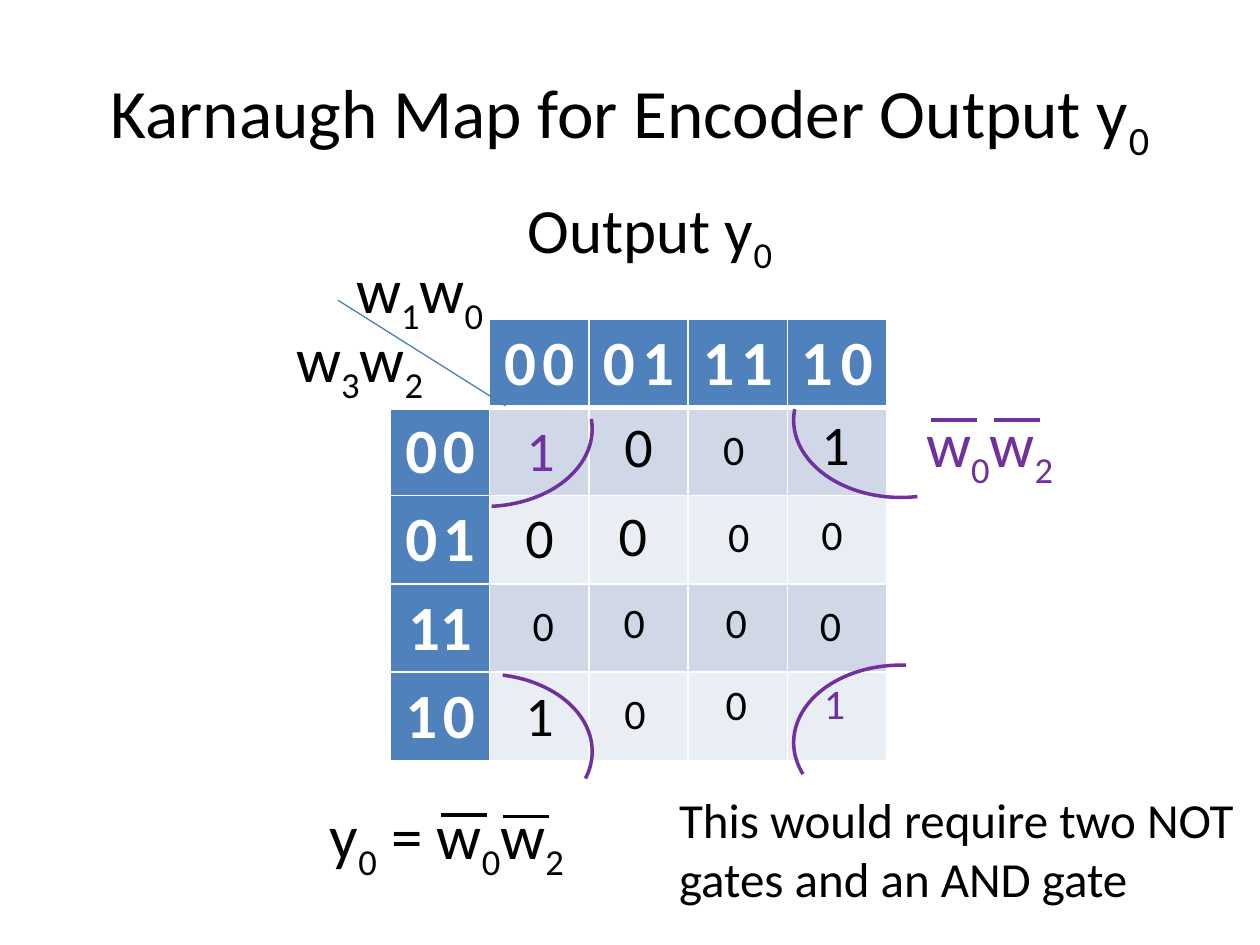
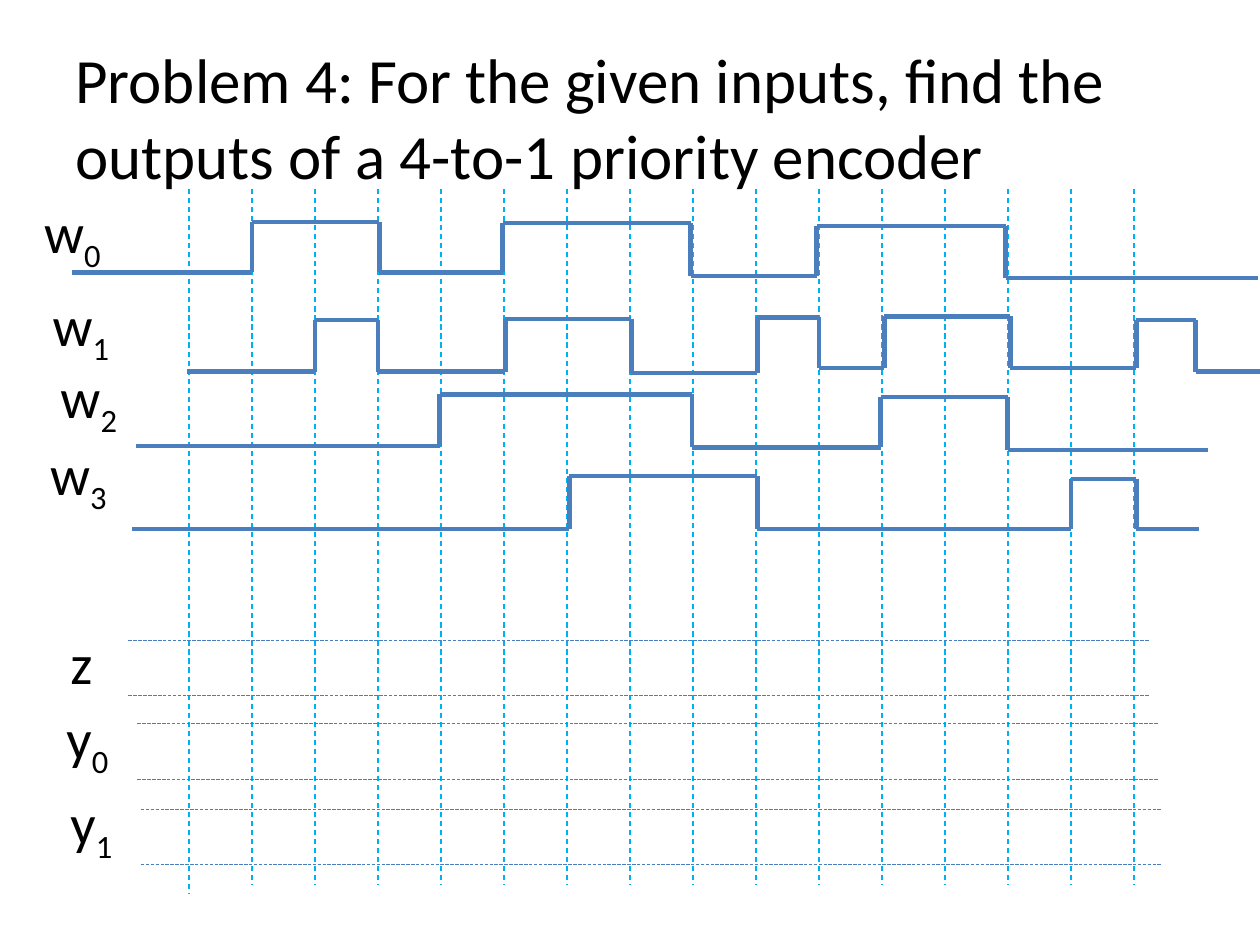
import pptx
import pptx.dml.color
import pptx.enum.dml
import pptx.enum.shapes
import pptx.enum.text
import pptx.oxml
import pptx.oxml.ns
import pptx.util
from pptx.util import Cm

COLORS = {
    "text": "000000",
    "white": "FFFFFF",
    "header": "4F81BD",
    "band_dark": "D0D8E8",
    "band_light": "E9EDF4",
    "signal": "4B7EBC",
    "group": "7030A0",
    "clock": "00B0F0",
}
FONT = "Calibri"
TITLE_BOX = (1.27, 0.76, 22.86, 3.18)
ALIGN = pptx.enum.text.PP_ALIGN
MIDDLE = pptx.enum.text.MSO_ANCHOR.MIDDLE
DASH = pptx.enum.dml.MSO_LINE


def add_text(slide, text, box, size, color="text", align=ALIGN.LEFT):
    """Add a text box in which "_" turns the next character into a subscript."""
    shape = slide.shapes.add_textbox(*map(Cm, box))
    shape.text_frame.word_wrap = True
    paragraph = shape.text_frame.paragraphs[0]
    paragraph.alignment = align
    first, *marked = text.split("_")
    pieces = [(first, False)]
    for part in marked:
        pieces += [(part[0], True), (part[1:], False)]
    for piece, is_subscript in pieces:
        if not piece:
            continue
        run = paragraph.add_run()
        run.text = piece
        run.font.name = FONT
        run.font.size = pptx.util.Pt(size)
        run.font.color.rgb = pptx.dml.color.RGBColor.from_string(COLORS[color])
        if is_subscript:
            run._r.get_or_add_rPr().set("baseline", "-25000")
    return shape


def add_line(slide, start, end, color, width, dash=None):
    line = slide.shapes.add_connector(
        pptx.enum.shapes.MSO_CONNECTOR.STRAIGHT, *map(Cm, (*start, *end)))
    line.line.color.rgb = pptx.dml.color.RGBColor.from_string(COLORS[color])
    line.line.width = pptx.util.Pt(width)
    if dash:
        line.line.dash_style = dash
    line._element.spPr.append(pptx.oxml.parse_xml(
        f"<a:effectLst {pptx.oxml.ns.nsdecls('a')}/>"))


presentation = pptx.Presentation()
presentation.slide_width = Cm(25.4)
presentation.slide_height = Cm(19.05)
blank_layout = presentation.slide_layouts[6]

# Slide 1: Karnaugh map
slide = presentation.slides.add_slide(blank_layout)
title = add_text(slide, "Karnaugh Map for Encoder Output y_0", TITLE_BOX, 39.6,
                 align=ALIGN.CENTER)
title.text_frame.vertical_anchor = MIDDLE

table = slide.shapes.add_table(5, 5, Cm(7.87), Cm(6.43), Cm(10), Cm(8.9)).table
table.horz_banding = False
# Each header code with the size of the space between its digits
column_codes = [("0 0", 16), ("0 1", 18), ("1 1", 16), ("1 0", 20)]
row_codes = [("0 0", 14), ("0 1", 14), ("11", 14), ("1 0", 14)]
headers = {(0, i): code for i, code in enumerate(column_codes, 1)}
headers.update({(i, 0): code for i, code in enumerate(row_codes, 1)})

for row in range(5):
    for column in range(5):
        cell = table.cell(row, column)
        cell.vertical_anchor = MIDDLE
        if (row, column) in headers:
            fill = "header"
            code, space_size = headers[row, column]
            paragraph = cell.text_frame.paragraphs[0]
            paragraph.alignment = ALIGN.CENTER
            for character in code:
                run = paragraph.add_run()
                run.text = character
                run.font.name = FONT
                run.font.bold = True
                run.font.size = pptx.util.Pt(space_size if character == " " else 36)
                run.font.color.rgb = pptx.dml.color.RGBColor.from_string(COLORS["white"])
        elif row == 0:
            fill = "white"
        else:
            fill = "band_dark" if row % 2 else "band_light"
        cell.fill.solid()
        cell.fill.fore_color.rgb = pptx.dml.color.RGBColor.from_string(COLORS[fill])
        for position, side in enumerate("LRTB"):
            is_thick = (row, side) in ((0, "B"), (1, "T"))
            border = pptx.oxml.parse_xml(
                f'<a:ln{side} {pptx.oxml.ns.nsdecls("a")} w="{38100 if is_thick else 12700}">'
                f'<a:solidFill><a:srgbClr val="{COLORS["white"]}"/></a:solidFill></a:ln{side}>')
            cell._tc.get_or_add_tcPr().insert(position, border)

add_line(slide, (10.19, 8.18), (6.81, 6.05), "signal", 0.75)
add_text(slide, "w_1w_0", (6.93, 4.93, 3.46, 1.8), 36)
add_text(slide, "w_3w_2", (5.72, 6.32, 3.58, 1.8), 36)
add_text(slide, "Output y_0", (10.39, 3.71, 5.79, 1.8), 36)

map_values = [
    ("1", 10.36, 8.26, 32, "group"), ("0", 12.34, 8.18, 32, "text"),
    ("0", 14.33, 8.41, 24, "text"), ("1", 16.31, 8.13, 32, "text"),
    ("0", 10.34, 10.01, 32, "text"), ("0", 12.22, 9.96, 32, "text"),
    ("0", 14.43, 10.16, 24, "text"), ("0", 16.31, 10.13, 24, "text"),
    ("0", 10.49, 11.96, 24, "text"), ("0", 12.32, 11.91, 24, "text"),
    ("0", 14.38, 11.91, 24, "text"), ("0", 16.28, 11.96, 24, "text"),
    ("1", 10.34, 13.59, 32, "text"), ("0", 12.34, 13.74, 24, "text"),
    ("0", 14.38, 13.56, 24, "text"), ("1", 16.36, 13.54, 24, "group"),
]
for value, left, top, size, color in map_values:
    add_text(slide, value, (left, top, 1.22, 1.63 if size == 32 else 1.27), size, color)

corner_arcs = [
    (7.62, 7.09, 212.76, 51.08, False),
    (16, 6.91, 212.47, 61.38, True),
    (7.62, 13.59, 169.83, 9.05, False),
    (16, 13.41, 159.68, 10.75, True),
]
for left, top, start_angle, end_angle, is_flipped in corner_arcs:
    arc = slide.shapes.add_shape(pptx.enum.shapes.MSO_SHAPE.ARC,
                                 Cm(left), Cm(top), Cm(4.32), Cm(3.12))
    arc.adjustments[0] = start_angle
    arc.adjustments[1] = end_angle
    arc.shadow.inherit = False
    arc.fill.background()
    arc.line.color.rgb = pptx.dml.color.RGBColor.from_string(COLORS["group"])
    arc.line.width = pptx.util.Pt(2)
    if is_flipped:
        arc._element.spPr.xfrm.set("flipH", "1")

add_text(slide, "w_0w_2", (18.42, 8.03, 3.68, 1.8), 36, "group")
add_text(slide, "y_0 = w_0w_2", (6.4, 15.93, 7.16, 1.8), 36)
overbars = [(18.77, 8.46, "group"), (20.04, 8.46, "group"),
            (8.89, 16.43, "text"), (10.13, 16.46, "text")]
for left, top, color in overbars:
    add_line(slide, (left, top), (left + 0.93, top), color, 2.25)
add_text(slide, "This would require two NOT gates and an AND gate",
         (13.44, 15.8, 11.81, 2.64), 28)

# Slide 2: timing diagram
slide = presentation.slides.add_slide(blank_layout)
title = add_text(
    slide, "Problem 4: For the given inputs, find the outputs of a 4-to-1 priority encoder",
    TITLE_BOX, 36)
title.text_frame.vertical_anchor = MIDDLE

for tick in range(16):
    x = 3.81 + 1.27 * tick
    add_line(slide, (x, 3.81), (x, 17.83 if tick else 18.03), "clock", 0.75, DASH.DASH)

signal_labels = [
    ("w_0", 0.64, 3.86), ("w_1", 0.81, 5.74), ("w_2", 0.97, 7.19), ("w_3", 0.76, 8.74),
    ("z", 1.17, 12.55), ("y_0", 1.09, 14.05), ("y_1", 1.17, 15.77),
]
for label, left, top in signal_labels:
    add_text(slide, label, (left, top, 1.78, 2.03), 32)

for left, high in [(2.59, 12.9), (2.77, 14.58), (2.84, 16.31)]:
    for y in (high, high + 1.12):
        add_line(slide, (left, y), (left + 20.57, y), "signal", 0.25, DASH.LONG_DASH)

# Each waveform: its start, then the end and the level of every step
waveforms = [
    (1.45, [(5.08, 5.49), (7.65, 4.47), (10.13, 5.49), (13.92, 4.5),
            (16.46, 5.56), (20.27, 4.55), (25.35, 5.61)]),
    (3.76, [(6.35, 7.49), (7.62, 6.45), (10.19, 7.49), (12.73, 6.43),
            (15.27, 7.52), (16.51, 6.4), (17.83, 7.42), (20.37, 6.38),
            (22.91, 7.42), (24.1, 6.45), (25.4, 7.49)]),
    (2.74, [(8.86, 8.99), (13.95, 7.95), (17.75, 9.02), (20.31, 8), (24.36, 9.07)]),
    (2.67, [(11.48, 10.67), (15.27, 9.6), (21.59, 10.67), (22.91, 9.65), (24.18, 10.67)]),
]
for x, steps in waveforms:
    previous_level = None
    for step_end, level in steps:
        if previous_level is not None:
            add_line(slide, (x, previous_level), (x, level), "signal", 2.5)
        add_line(slide, (x, level), (step_end, level), "signal", 2.5)
        x, previous_level = step_end, level

presentation.save("out.pptx")
